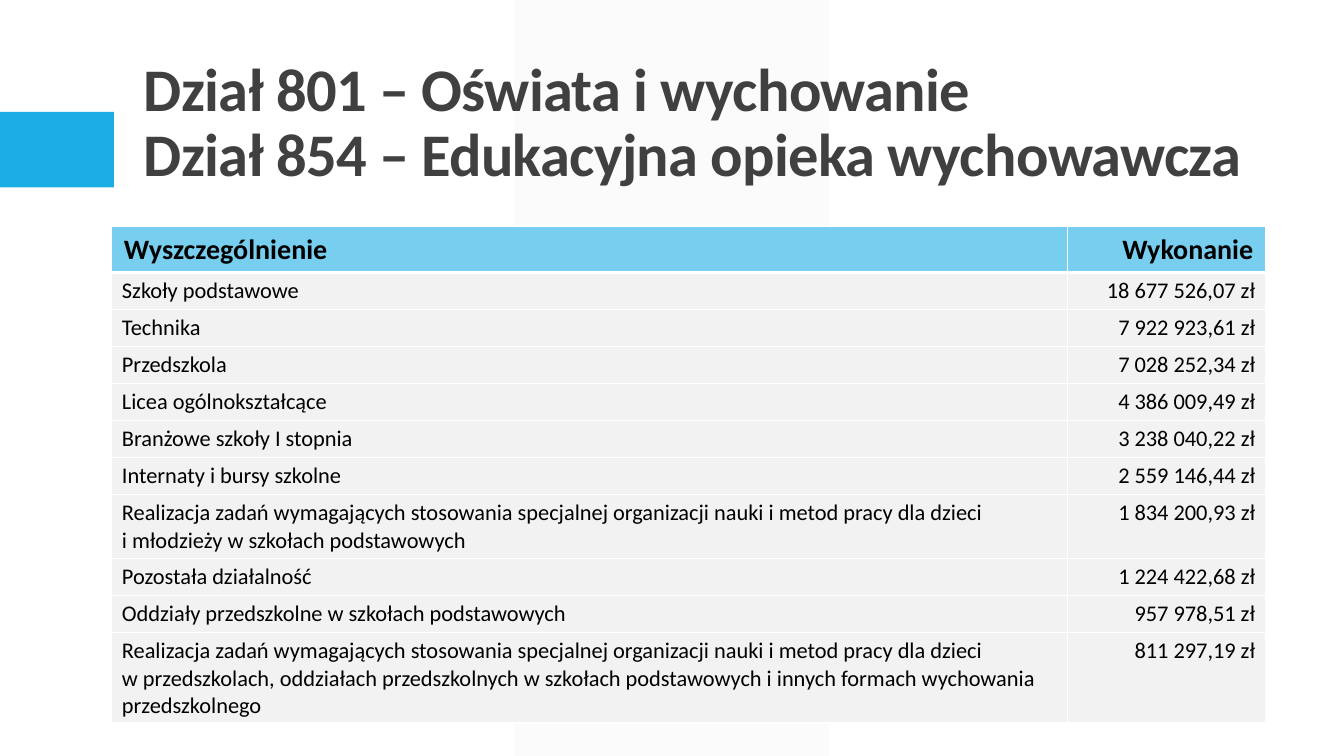
from dataclasses import dataclass

from lxml.etree import SubElement
from pptx import Presentation
from pptx.dml.color import RGBColor
from pptx.enum.shapes import MSO_SHAPE
from pptx.enum.text import MSO_ANCHOR, PP_ALIGN
from pptx.oxml.ns import qn
from pptx.util import Inches, Pt

WHITE = RGBColor(0xFF, 0xFF, 0xFF)
BLACK = RGBColor(0x00, 0x00, 0x00)
DARK_GRAY = RGBColor(0x40, 0x40, 0x40)
LIGHT_GRAY = RGBColor(0xF2, 0xF2, 0xF2)
BLUE = RGBColor(0x1C, 0xAD, 0xE4)
LIGHT_BLUE = RGBColor(0x77, 0xCE, 0xEF)

TITLE = "Dział 801 – Oświata i wychowanie\vDział 854 – Edukacyjna opieka wychowawcza"
TITLE_FONT = {"name": "Calibri", "size": Pt(43.2), "bold": True}
COLUMN_WIDTHS = (9.48, 1.96)
ALIGNMENTS = (PP_ALIGN.LEFT, PP_ALIGN.RIGHT)


@dataclass(frozen=True)
class Expense:
    name: str
    amount: str


@dataclass(frozen=True)
class RowStyle:
    height: float
    fill: RGBColor
    size: int
    bold: bool
    anchor: MSO_ANCHOR
    margin_x: float
    margin_y: float
    bottom_border: int


@dataclass(frozen=True)
class Block:
    shape: MSO_SHAPE
    left: float
    top: float
    width: float
    height: float
    color: RGBColor
    opacity: int


HEADER = Expense("Wyszczególnienie", "Wykonanie")
EXPENSES = (
    Expense("Szkoły podstawowe", "18 677 526,07 zł"),
    Expense("Technika", "7 922 923,61 zł"),
    Expense("Przedszkola", "7 028 252,34 zł"),
    Expense("Licea ogólnokształcące", "4 386 009,49 zł"),
    Expense("Branżowe szkoły I stopnia", "3 238 040,22 zł"),
    Expense("Internaty i bursy szkolne", "2 559 146,44 zł"),
    Expense(
        "Realizacja zadań wymagających stosowania specjalnej organizacji nauki "
        "i metod pracy dla dzieci \vi młodzieży w szkołach podstawowych",
        "1 834 200,93 zł",
    ),
    Expense("Pozostała działalność", "1 224 422,68 zł"),
    Expense("Oddziały przedszkolne w szkołach podstawowych", "957 978,51 zł"),
    Expense(
        "Realizacja zadań wymagających stosowania specjalnej organizacji nauki "
        "i metod pracy dla dzieci \vw przedszkolach, oddziałach przedszkolnych "
        "w szkołach podstawowych i innych formach wychowania przedszkolnego",
        "811 297,19 zł",
    ),
)
HEADER_STYLE = RowStyle(0.41, LIGHT_BLUE, 20, True, MSO_ANCHOR.MIDDLE, 0.12, 0.06, 3)
BODY_STYLE = RowStyle(0.33, LIGHT_GRAY, 16, False, MSO_ANCHOR.TOP, 0.1, 0.05, 1)
BLOCKS = (
    Block(MSO_SHAPE.PARALLELOGRAM, 5.1, 0, 3.12, 7.5, LIGHT_GRAY, 30),
    Block(MSO_SHAPE.RECTANGLE, 0, 1.11, 1.13, 0.75, BLUE, 100),
)


def set_values(target, values: dict) -> None:
    for name, value in values.items():
        setattr(target, name, value)


def add_block(s, block: Block) -> None:
    box = map(Inches, (block.left, block.top, block.width, block.height))
    sp = s.shapes.add_shape(block.shape, *box)
    sp.shadow.inherit = False
    sp.line.fill.background()
    sp.fill.solid()
    sp.fill.fore_color.rgb = block.color
    if len(sp.adjustments):
        sp.adjustments[0] = 0
    if block.opacity < 100:
        color = sp._element.spPr.find(".//" + qn("a:srgbClr"))
        SubElement(color, qn("a:alpha"), val=str(block.opacity * 1000))


def add_title(s) -> None:
    sp = s.shapes.add_textbox(Inches(1.33), Inches(0.41), Inches(11.56), Inches(1.52))
    tf = sp.text_frame
    set_values(tf, {"word_wrap": True, "vertical_anchor": MSO_ANCHOR.BOTTOM})
    p = tf.paragraphs[0]
    p.text = TITLE
    p.line_spacing = 0.9
    for r in p.runs:
        set_values(r.font, TITLE_FONT)
        r.font.color.rgb = DARK_GRAY
        r._r.get_or_add_rPr().set("spc", "-50")


def add_borders(cell, bottom: int) -> None:
    tc_pr = cell._tc.get_or_add_tcPr()
    widths = {"a:lnL": 1, "a:lnR": 1, "a:lnT": 1, "a:lnB": bottom}
    for index, (tag, width) in enumerate(widths.items()):
        line = SubElement(tc_pr, qn(tag), w=str(Pt(width)))
        tc_pr.insert(index, line)
        fill = SubElement(line, qn("a:solidFill"))
        SubElement(fill, qn("a:srgbClr"), val=str(WHITE))


def fill_cell(cell, text: str, alignment: PP_ALIGN, style: RowStyle) -> None:
    margin_x, margin_y = Inches(style.margin_x), Inches(style.margin_y)
    set_values(cell, {
        "margin_left": margin_x,
        "margin_right": margin_x,
        "margin_top": margin_y,
        "margin_bottom": margin_y,
        "vertical_anchor": style.anchor,
    })
    cell.fill.solid()
    cell.fill.fore_color.rgb = style.fill
    p = cell.text_frame.paragraphs[0]
    p.text = text
    p.alignment = alignment
    for r in p.runs:
        set_values(r.font, {"name": "Calibri", "size": Pt(style.size), "bold": style.bold})
        r.font.color.rgb = BLACK
    add_borders(cell, style.bottom_border)


def add_expense_table(s) -> None:
    rows = [(HEADER, HEADER_STYLE)] + [(expense, BODY_STYLE) for expense in EXPENSES]
    table = s.shapes.add_table(
        len(rows), len(COLUMN_WIDTHS),
        Inches(1.11), Inches(2.25), Inches(sum(COLUMN_WIDTHS)), Inches(4.92),
    ).table
    table.horz_banding = False
    for column, width in zip(table.columns, COLUMN_WIDTHS):
        column.width = Inches(width)
    for row, (expense, style) in zip(table.rows, rows):
        row.height = Inches(style.height)
        texts = (expense.name, expense.amount)
        for cell, text, alignment in zip(row.cells, texts, ALIGNMENTS):
            fill_cell(cell, text, alignment, style)


def main() -> None:
    prs = Presentation()
    set_values(prs, {"slide_width": Inches(13.33), "slide_height": Inches(7.5)})
    s = prs.slides.add_slide(prs.slide_layouts[6])
    for block in BLOCKS:
        add_block(s, block)
    add_title(s)
    add_expense_table(s)
    prs.save("out.pptx")


if __name__ == "__main__":
    main()
